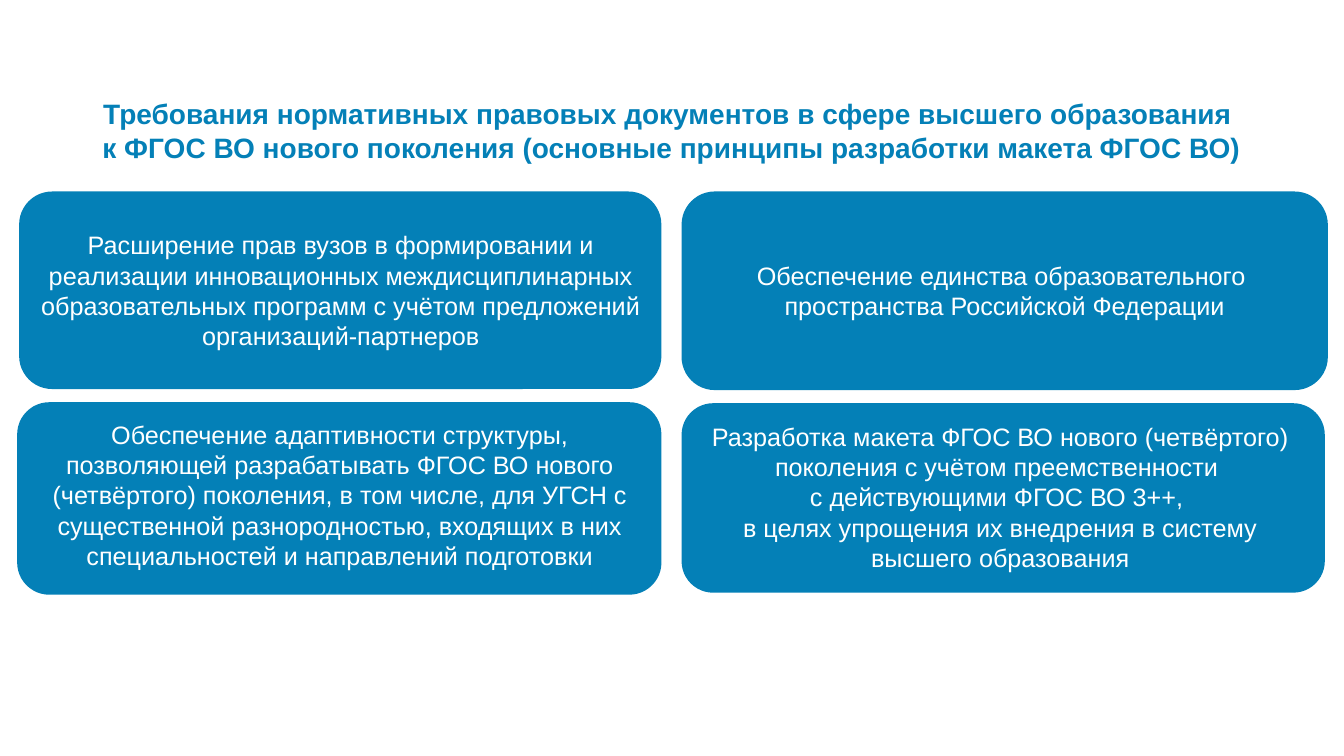
from pptx import Presentation
from pptx.dml.color import RGBColor
from pptx.enum.shapes import MSO_SHAPE
from pptx.enum.text import MSO_ANCHOR, MSO_AUTO_SIZE, PP_ALIGN
from pptx.util import Emu, Pt

PX = 9144
COLORS = {"blue": "0480B7", "white": "FFFFFF"}

TITLE = (
    "Требования нормативных правовых документов в сфере высшего образования \n"
    "к ФГОС ВО нового поколения (основные принципы разработки макета ФГОС ВО)"
)
PRINCIPLES = [
    ((19, 190, 637, 196), (31, 223, 614, 131),
     "Расширение прав вузов в формировании и реализации инновационных "
     "междисциплинарных образовательных программ с учётом предложений "
     "организаций-партнеров"),
    ((676, 190, 641, 197), (696, 253, 601, 71),
     "Обеспечение единства образовательного \vпространства Российской Федерации"),
    ((17, 399, 639, 191), (30, 411, 614, 162),
     "Обеспечение адаптивности структуры, позволяющей разрабатывать ФГОС ВО "
     "нового (четвёртого) поколения, в том числе, для УГСН с существенной "
     "разнородностью, входящих в них специальностей и направлений подготовки"),
    ((676, 400, 638, 188), (692, 413, 600, 162),
     "Разработка макета ФГОС ВО нового (четвёртого) поколения с учётом "
     "преемственности \vс действующими ФГОС ВО 3++, \vв целях упрощения их "
     "внедрения в систему высшего образования"),
]


class SlideBuilder:
    """Draws styled elements on one slide, with lengths in px."""

    font = "Arial"

    def __init__(self, slide):
        self.slide = slide

    def card(self, box):
        sp = self.slide.shapes.add_shape(
            MSO_SHAPE.ROUNDED_RECTANGLE, *(Emu(v * PX) for v in box))
        sp.adjustments[0] = 0.167
        sp.shadow.inherit = False
        sp.fill.solid()
        sp.fill.fore_color.rgb = RGBColor.from_string(COLORS["blue"])
        sp.line.fill.background()

    def text(self, box, text, size, color, bold=False):
        sp = self.slide.shapes.add_textbox(*(Emu(v * PX) for v in box))
        tf = sp.text_frame
        tf.word_wrap = True
        tf.auto_size = MSO_AUTO_SIZE.SHAPE_TO_FIT_TEXT
        tf.vertical_anchor = MSO_ANCHOR.TOP
        tf.text = text
        for p in tf.paragraphs:
            p.alignment = PP_ALIGN.CENTER
            for r in p.runs:
                r.font.name = self.font
                r.font.size = Pt(size)
                r.font.bold = bold
                r.font.color.rgb = RGBColor.from_string(COLORS[color])


def main():
    prs = Presentation()
    prs.slide_width = Emu(1333 * PX)
    prs.slide_height = Emu(750 * PX)
    s = SlideBuilder(prs.slides.add_slide(prs.slide_layouts[6]))
    s.text((65, 91, 1202, 77), TITLE, 20, "blue", bold=True)
    for card_box, text_box, principle in PRINCIPLES:
        s.card(card_box)
        s.text(text_box, principle, 18, "white")
    prs.save("out.pptx")


if __name__ == "__main__":
    main()
